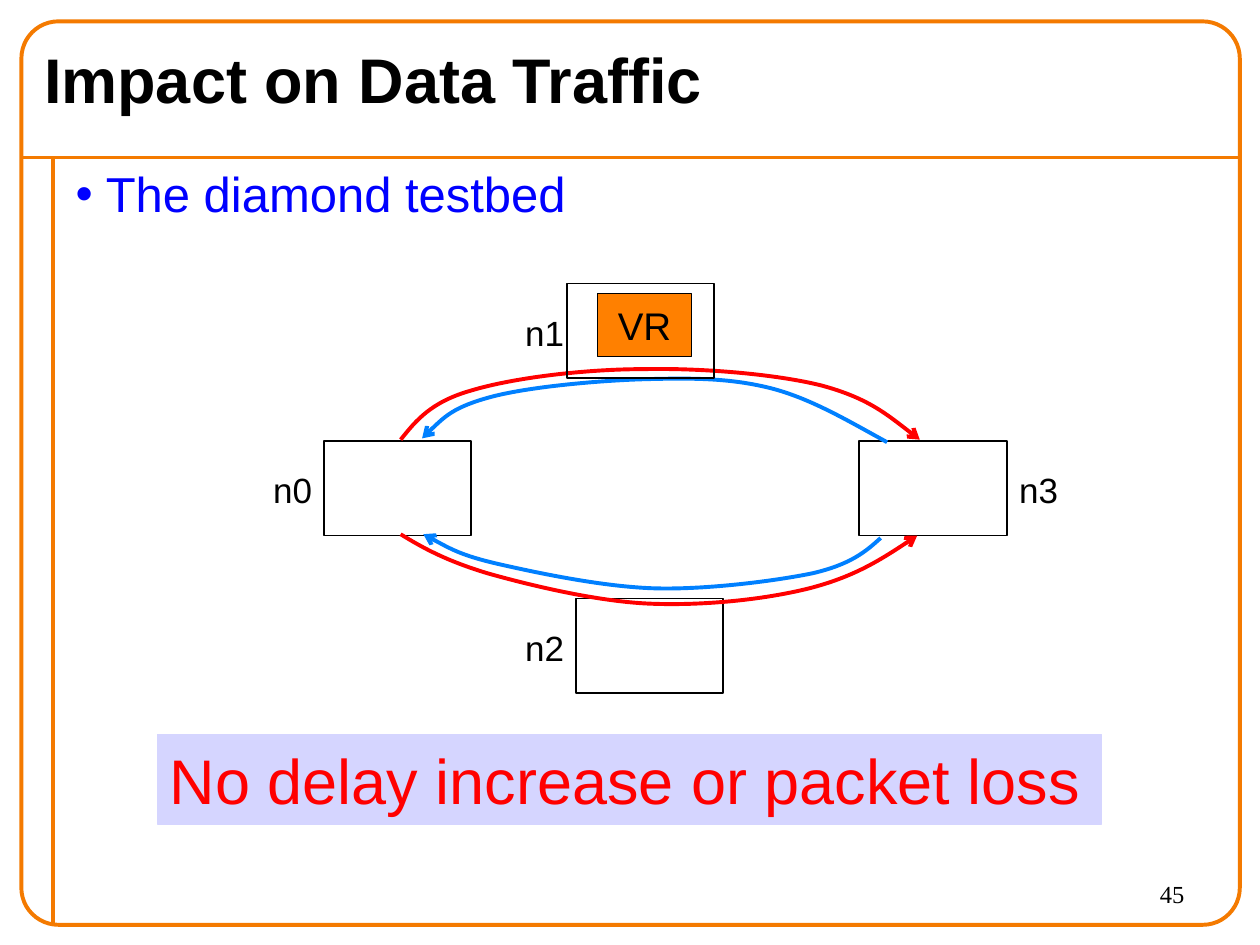
from lxml import etree
from pptx import Presentation
from pptx.dml.color import RGBColor
from pptx.enum.shapes import MSO_CONNECTOR, MSO_SHAPE
from pptx.enum.text import MSO_ANCHOR, MSO_AUTO_SIZE, PP_ALIGN
from pptx.oxml.ns import qn
from pptx.util import Inches, Pt

RECT, ROUNDED = MSO_SHAPE.RECTANGLE, MSO_SHAPE.ROUNDED_RECTANGLE
STRAIGHT = MSO_CONNECTOR.STRAIGHT
LEFT, CENTER, RIGHT = PP_ALIGN.LEFT, PP_ALIGN.CENTER, PP_ALIGN.RIGHT
MIDDLE = MSO_ANCHOR.MIDDLE
NO_FIT = MSO_AUTO_SIZE.NONE

COLORS = {"frame": "F47A00", "black": "000000", "blue": "0000FF", "red": "FF0000",
          "sky": "0080FF", "orange": "FF8000", "lilac": "D5D5FF"}
NODE_WIDTH, NODE_HEIGHT = 1.17, 0.75


def color(name):
    return RGBColor.from_string(COLORS[name])


def write(shape, text, size, ink="black", align=LEFT, font="Arial", bold=False, wrap=True):
    frame = shape.text_frame
    frame.word_wrap = wrap
    frame.auto_size = NO_FIT
    para = frame.paragraphs[0]
    para.alignment = align
    span = para.add_run()
    span.text = text
    for name, value in {"name": font, "size": Pt(size), "bold": bold}.items():
        setattr(span.font, name, value)
    span.font.color.rgb = color(ink)
    return para


def place(shape, box):
    for name, value in zip(("left", "top", "width", "height"), box):
        setattr(shape, name, Inches(value))


def outline(shape, ink, width):
    shape.line.color.rgb = color(ink)
    shape.line.width = Pt(width)


def add_block(page, box, ink="black", width=1, fill=None, kind=RECT):
    block = page.shapes.add_shape(kind, *map(Inches, box))
    block.shadow.inherit = False
    if fill:
        block.fill.solid()
        block.fill.fore_color.rgb = color(fill)
    else:
        block.fill.background()
    outline(block, ink, width)
    return block


def add_label(page, box, text, size, **style):
    label = page.shapes.add_textbox(*map(Inches, box))
    write(label, text, size, **style)


def add_frame(page, master, box):
    left, top, width, height = box
    rule_top, rule_left = top + 1.08, left + 0.25
    parts = []
    for ends in ((left, rule_top, left + width - 0.01, rule_top),
                 (rule_left, rule_top, rule_left, top + height - 0.01)):
        rule = page.shapes.add_connector(STRAIGHT, *map(Inches, ends))
        outline(rule, "frame", 2.25)
        etree.SubElement(rule._element.spPr, qn("a:effectLst"))
        parts.append(rule)
    border = add_block(page, box, "frame", 2.25, kind=ROUNDED)
    border.adjustments[0] = 0.041
    for part in parts + [border]:
        master.shapes._spTree.append(part._element)


def add_title(page, box):
    title = page.shapes.title
    place(title, box)
    write(title, "Impact on Data Traffic", 36, bold=True)
    title.text_frame.vertical_anchor = MIDDLE


def add_body(page, box):
    body = page.placeholders[1]
    place(body, box)
    para = write(body, "The diamond testbed", 28, "blue")
    para.space_before = Pt(0)
    settings = para._p.get_or_add_pPr()
    settings.set("marL", str(Inches(0.24)))
    settings.set("indent", str(-Inches(0.24)))
    etree.SubElement(settings, qn("a:buChar"), char="•")


def add_flow(page, origin, ink, points):
    points = [(Inches(origin[0] + x), Inches(origin[1] + y)) for x, y in points]
    builder = page.shapes.build_freeform(*points[0])
    builder.add_line_segments(points[3::3], close=False)
    flow = builder.convert_to_shape()
    flow.shadow.inherit = False
    flow.fill.background()
    outline(flow, ink, 2.25)
    etree.SubElement(flow.line._get_or_add_ln(), qn("a:tailEnd"), type="arrow")
    segments = list(flow._element.iter(qn("a:lnTo")))
    for index, segment in enumerate(segments):
        curve = etree.Element(qn("a:cubicBezTo"))
        for x, y in points[3 * index + 1:3 * index + 4]:
            etree.SubElement(curve, qn("a:pt"), x=str(x - flow.left), y=str(y - flow.top))
        segment.getparent().replace(segment, curve)


def add_diamond(page, box):
    left, top = box[:2]
    labels = {"n0": (0, 1.42), "n1": (2, 0.17), "n2": (2, 2.67), "n3": (5.92, 1.42)}
    for text, (x, y) in labels.items():
        add_label(page, (left + x, top + y, 0.51, 0.44), text, 20, wrap=False)
    router = add_block(page, (left + 2.67, top + 0.08, 0.75, 0.5), width=0.75, fill="orange")
    write(router, "VR", 22, align=CENTER)
    for x, y in ((0.5, 1.25), (2.5, 2.5), (4.75, 1.25)):
        add_block(page, (left + x, top + y, NODE_WIDTH, NODE_HEIGHT))
    flows = (
        ("red", [(1.11, 1.24), (1.23, 1.09), (1.35, 0.94), (1.67, 0.85), (2, 0.75),
                 (2.57, 0.68), (3.04, 0.68), (3.5, 0.67), (4.09, 0.72), (4.45, 0.81),
                 (4.82, 0.91), (5.02, 1.08), (5.23, 1.24)]),
        ("sky", [(4.97, 1.26), (4.66, 1.09), (4.36, 0.91), (4.04, 0.83), (3.72, 0.75),
                 (3.42, 0.75), (3.05, 0.76), (2.69, 0.77), (2.13, 0.82), (1.83, 0.9),
                 (1.53, 0.98), (1.41, 1.1), (1.28, 1.23)]),
        ("red", [(1.11, 1.99), (1.29, 2.1), (1.47, 2.2), (1.8, 2.3), (2.12, 2.39),
                 (2.65, 2.52), (3.07, 2.54), (3.5, 2.56), (3.99, 2.51), (4.35, 2.42),
                 (4.7, 2.33), (4.96, 2.17), (5.21, 2)]),
        ("sky", [(4.92, 2.02), (4.8, 2.13), (4.68, 2.23), (4.38, 2.3), (4.09, 2.36),
                 (3.55, 2.43), (3.14, 2.42), (2.73, 2.41), (2.21, 2.3), (1.9, 2.23),
                 (1.59, 2.16), (1.44, 2.07), (1.29, 1.99)]),
    )
    for ink, points in flows:
        add_flow(page, (left, top), ink, points)
    add_block(page, (left + 2.43, top, NODE_WIDTH, NODE_HEIGHT))


def add_banner(page, box):
    banner = add_block(page, box, "lilac", 0.75, "lilac")
    write(banner, "No delay increase or packet loss", 36, "red", wrap=False)


def main():
    deck = Presentation()
    deck.slide_width, deck.slide_height = Inches(10), Inches(7.5)
    page = deck.slides.add_slide(deck.slide_layouts[1])
    add_frame(page, deck.slide_master, (0.17, 0.17, 9.67, 7.17))
    add_title(page, (0.25, 0.25, 9.33, 0.75))
    add_body(page, (0.5, 1.25, 9, 4.95))
    add_diamond(page, (2.07, 2.25, 6.43, 3.25))
    add_banner(page, (1.25, 5.83, 7.49, 0.71))
    add_label(page, (7.17, 6.93, 2.33, 0.4), "45", 14, align=RIGHT, font="Times New Roman")
    deck.save("out.pptx")


if __name__ == "__main__":
    main()
